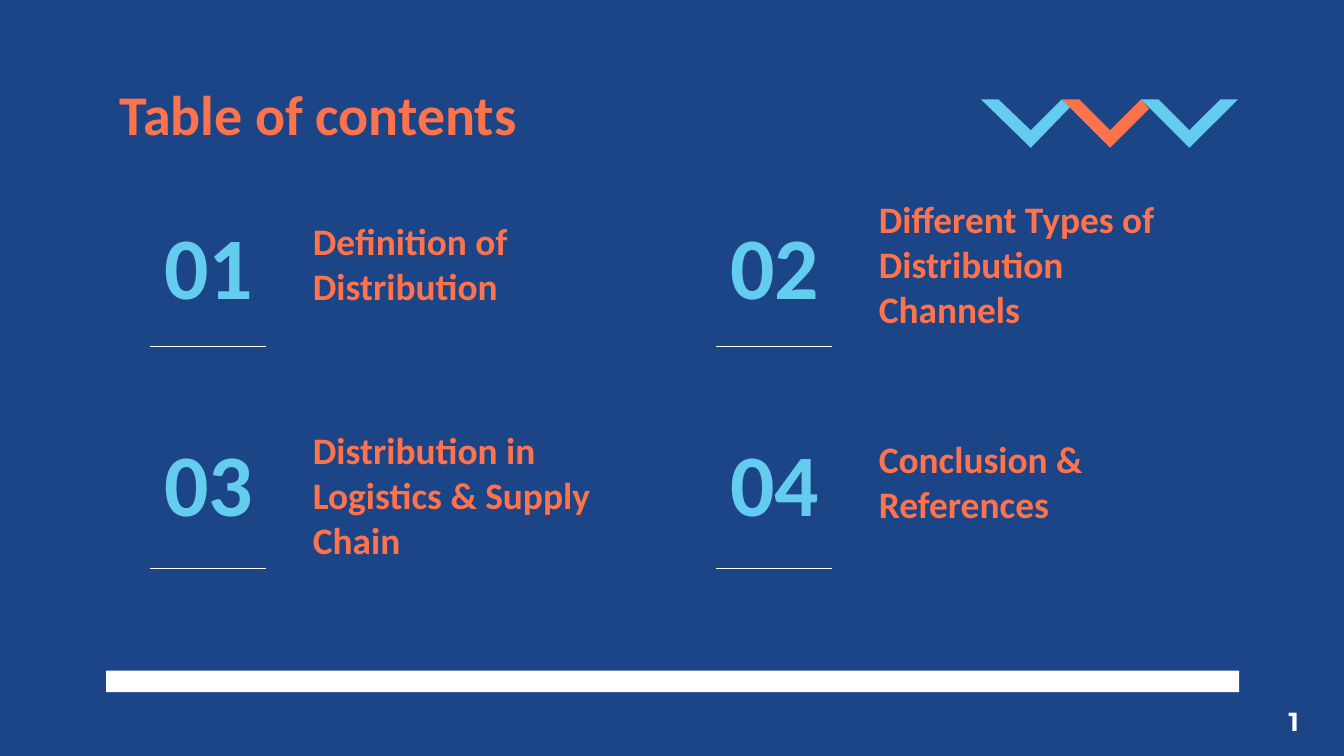
from lxml import etree
from pptx import Presentation
from pptx.dml.color import RGBColor
from pptx.enum.shapes import MSO_CONNECTOR, MSO_SHAPE
from pptx.enum.text import MSO_ANCHOR, MSO_AUTO_SIZE, PP_ALIGN
from pptx.oxml.ns import qn
from pptx.util import Inches, Pt

LEFT, CENTER = PP_ALIGN.LEFT, PP_ALIGN.CENTER
TOP, MIDDLE = MSO_ANCHOR.TOP, MSO_ANCHOR.MIDDLE
RECTANGLE, STRAIGHT = MSO_SHAPE.RECTANGLE, MSO_CONNECTOR.STRAIGHT
NO_AUTOFIT = MSO_AUTO_SIZE.NONE

COLORS = {"navy": "1C4587", "sky": "64CCEF", "coral": "FF734C", "white": "FFFFFF"}
SLIDE_WIDTH = 10
SLIDE_HEIGHT = SLIDE_WIDTH * 9 / 16
TITLE = "Table of contents"
PAGE_NUMBER = "1"
SECTIONS = [
    ("Definition of Distribution", 1.67),
    ("Different Types of Distribution Channels", 1.67),
    ("Distribution in Logistics & Supply Chain", 3.39),
    ("Conclusion & References", 3.29),
]
COLUMN_LEFTS = [0.98, 5.19]
ROWS = [(1.64, 2.58), (3.26, 4.23)]
CHEVRONS = [
    ("sky", [(7.3, 0.74), (7.43, 0.74), (7.67, 0.97), (7.9, 0.74), (7.96, 0.8), (7.67, 1.1)]),
    ("coral", [(7.9, 0.74), (8.03, 0.74), (8.26, 0.97), (8.49, 0.74), (8.55, 0.81), (8.26, 1.1)]),
    ("sky", [(8.49, 0.74), (8.62, 0.74), (8.85, 0.97), (9.08, 0.74), (9.21, 0.74), (8.85, 1.1)]),
]


def rgb(color):
    """Return the named palette colour."""
    return RGBColor.from_string(COLORS[color])


def paint(shape, color):
    """Give a shape a flat fill without line or shadow."""
    shape.fill.solid()
    shape.fill.fore_color.rgb = rgb(color)
    shape.line.fill.background()
    shape.shadow.inherit = False


def place_text(holder, box, text, size, color, align=LEFT, anchor=MIDDLE,
               font="Calibri", inset=0.1, wrap=True):
    """Position a text holder and write one bold paragraph in it."""
    holder.left, holder.top, holder.width, holder.height = map(Inches, box)
    frame = holder.text_frame
    frame.text = text
    frame.word_wrap = wrap
    frame.auto_size = NO_AUTOFIT
    frame.vertical_anchor = anchor
    frame.margin_left = frame.margin_right = Inches(0.1)
    frame.margin_top = frame.margin_bottom = Inches(inset)
    paragraph = frame.paragraphs[0]
    paragraph.alignment = align
    paragraph.font.name = font
    paragraph.font.size = Pt(size)
    paragraph.font.bold = True
    paragraph.font.color.rgb = rgb(color)


def add_text(slide, *args, **options):
    """Add a text box with one bold paragraph."""
    place_text(slide.shapes.add_textbox(0, 0, 0, 0), *args, **options)


def add_chevron(slide, color, points):
    """Draw one filled chevron."""
    start, *rest = [(Inches(x), Inches(y)) for x, y in points]
    builder = slide.shapes.build_freeform(*start)
    builder.add_line_segments(rest, close=True)
    paint(builder.convert_to_shape(), color)


def add_rule(slide, left, top, width):
    """Draw a thin white rule."""
    rule = slide.shapes.add_connector(
        STRAIGHT, Inches(left), Inches(top), Inches(left + width), Inches(top))
    rule.line.color.rgb = rgb("white")
    rule.line.width = Pt(0.75)
    etree.SubElement(rule.element.spPr, qn("a:effectLst"))


def main():
    """Build the table of contents slide."""
    deck = Presentation()
    deck.slide_width, deck.slide_height = Inches(SLIDE_WIDTH), Inches(SLIDE_HEIGHT)
    slide = deck.slides.add_slide(deck.slide_layouts[5])
    slide.background.fill.solid()
    slide.background.fill.fore_color.rgb = rgb("navy")

    for color, points in CHEVRONS:
        add_chevron(slide, color, points)
    footer_bar = slide.shapes.add_shape(
        RECTANGLE, Inches(0.79), Inches(4.99), Inches(8.43), Inches(0.16))
    paint(footer_bar, "white")

    place_text(slide.shapes.title, (0.79, 0.49, 8.43, 0.63), TITLE, 30, "coral", anchor=TOP)
    for index, (heading, heading_top) in enumerate(SECTIONS):
        row, column = divmod(index, len(COLUMN_LEFTS))
        left = COLUMN_LEFTS[column]
        number_top, rule_top = ROWS[row]
        add_text(slide, (left, number_top, 1.15, 0.65), f"{index + 1:02d}", 47, "sky", CENTER)
        add_text(slide, (left + 1.25, heading_top, 2.58, 0.58), heading, 20, "coral")
        add_rule(slide, left + 0.14, rule_top, 0.86)
    add_text(slide, (9.49, 5.2, 0.34, 0.34), PAGE_NUMBER, 14, "white", anchor=TOP,
             font="Montserrat", inset=0.05, wrap=False)

    deck.save("out.pptx")


if __name__ == "__main__":
    main()
